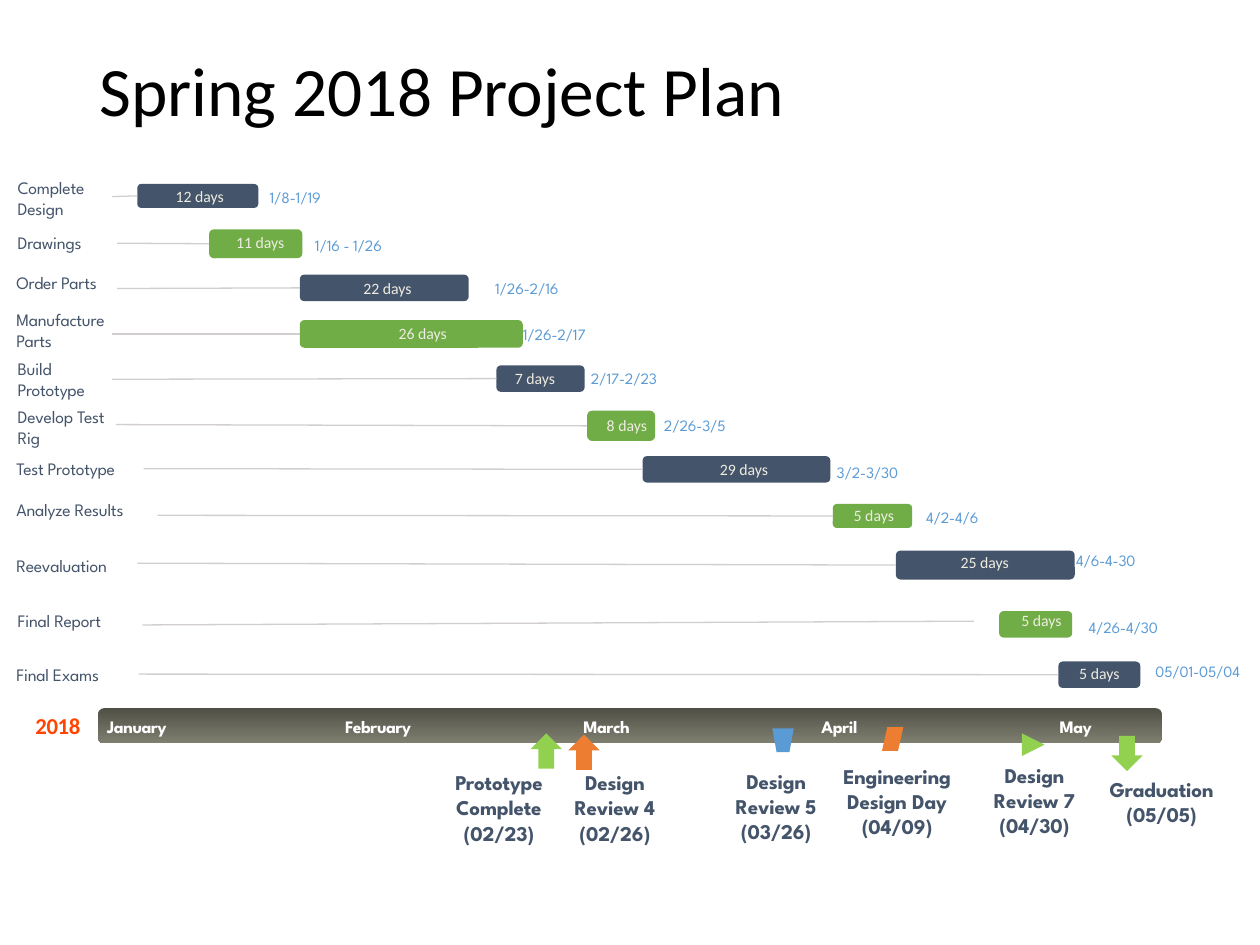
import pptx
import pptx.dml.color
import pptx.enum.shapes
import pptx.enum.text
import pptx.oxml.ns
import pptx.util
from lxml import etree

RGB = pptx.dml.color.RGBColor
SHAPE = pptx.enum.shapes.MSO_SHAPE
ALIGN = pptx.enum.text.PP_ALIGN
inch = pptx.util.Inches

NAVY = RGB(0x44, 0x54, 0x6A)
GREEN = RGB(0x70, 0xAD, 0x47)
LIME = RGB(0x92, 0xD0, 0x50)
ORANGE = RGB(0xED, 0x7D, 0x31)
BLUE = RGB(0x5B, 0x9B, 0xD5)
LEADER_GREY = RGB(0xD2, 0xCE, 0xCE)
CREAM = RGB(0xEE, 0xEC, 0xE1)
YEAR_RED = RGB(0xFF, 0x45, 0x00)
BAND_DARK = RGB(0x50, 0x50, 0x46)
BAND_LIGHT = RGB(0x7F, 0x7F, 0x70)
WHITE = RGB(0xFF, 0xFF, 0xFF)
BLACK = RGB(0, 0, 0)

BODY, PLAIN = "League Spartan", "Calibri"
LINE_10PT, LINE_9PT, LINE_12PT = 0.17, 0.15, 0.2

# Task: (name, left, top, lines), leader start (x, y),
# bar (left, width, height), duration (text, left, top), dates (text, left, top)
TASKS = [
    (("Complete Design", 0.14, 1.4, 2), (0.89, 1.56), (1.09, 0.96, 0.19),
     ("12 days", 1.39, 1.48), ("1/8-1/19", 2.14, 1.49)),
    (("Drawings", 0.14, 1.84, 1), (0.93, 1.93), (1.66, 0.74, 0.23),
     ("11 days", 1.87, 1.85), ("1/16 - 1/26", 2.5, 1.87)),
    (("Order Parts", 0.13, 2.16, 1), (0.93, 2.29), (2.38, 1.34, 0.21),
     ("22 days", 2.88, 2.21), ("1/26-2/16", 3.93, 2.21)),
    (("Manufacture Parts", 0.13, 2.45, 2), (0.89, 2.65), (2.38, 1.77, 0.22),
     ("26 days", 3.16, 2.57), ("1/26-2/17", 4.15, 2.58)),
    (("Build Prototype", 0.14, 2.84, 2), (0.89, 3.01), (3.94, 0.7, 0.21),
     ("7 days", 4.05, 2.93), ("2/17-2/23", 4.69, 2.93)),
    (("Develop Test Rig", 0.14, 3.22, 2), (0.92, 3.37), (4.66, 0.54, 0.24),
     ("8 days", 4.78, 3.3), ("2/26-3/5", 5.27, 3.3)),
    (("Test Prototype", 0.13, 3.63, 1), (1.14, 3.72), (5.1, 1.49, 0.21),
     ("29 days", 5.71, 3.65), ("3/2-3/30", 6.64, 3.67)),
    (("Analyze Results", 0.13, 3.96, 1), (1.25, 4.09), (6.61, 0.63, 0.19),
     ("5 days", 6.74, 4.01), ("4/2-4/6", 7.35, 4.03)),
    (("Reevaluation", 0.13, 4.4, 1), (1.09, 4.47), (7.11, 1.42, 0.23),
     ("25 days", 7.62, 4.39), ("4/6-4-30", 8.54, 4.37)),
    (("Final Report", 0.14, 4.84, 1), (1.13, 4.96), (7.93, 0.58, 0.21),
     ("5 days", 8.07, 4.85), ("4/26-4/30", 8.64, 4.9)),
    (("Final Exams", 0.13, 5.27, 1), (1.1, 5.35), (8.4, 0.65, 0.21),
     ("5 days", 8.53, 5.27), ("05/01-05/04", 9.17, 5.25)),
]
BAR_TOPS = [round(1.46 + 0.36 * row, 2) for row in range(7)] + [4, 4.37, 4.85, 5.25]
# Leaders that stop short of their bar: task -> end point
SHORT_LEADERS = {"Final Report": (7.73, 4.93)}

MONTHS = ["January", "February", "March", "April", "May"]
MONTH_LEFT, MONTH_PITCH, MONTH_WIDTH = 0.85, 1.89, 0.8

# Milestone: name, date, label (left, top, width, lines), marker, box, colour, rotation
MILESTONES = [
    ("Prototype Complete", "(02/23)", (3.5, 6.11, 0.92, 3),
     SHAPE.DOWN_ARROW, (4.21, 5.82, 0.25, 0.28), LIME, 180),
    ("Design Review 4", "(02/26)", (4.42, 6.11, 0.92, 3),
     SHAPE.UP_ARROW, (4.51, 5.83, 0.25, 0.28), ORANGE, 0),
    ("Design Review 5", "(03/26)", (5.7, 6.1, 0.92, 3),
     SHAPE.FLOWCHART_MANUAL_OPERATION, (6.13, 5.78, 0.17, 0.19), BLUE, 0),
    ("Engineering Design Day", "(04/09)", (6.55, 6.06, 1.14, 3),
     SHAPE.PARALLELOGRAM, (7, 5.77, 0.17, 0.19), ORANGE, 0),
    ("Design Review 7", "(04/30)", (7.75, 6.05, 0.92, 3),
     SHAPE.FLOWCHART_MERGE, (8.11, 5.82, 0.18, 0.18), LIME, 270),
    ("Graduation", "(05/05)", (8.67, 6.16, 1.1, 2),
     SHAPE.DOWN_ARROW, (8.82, 5.84, 0.25, 0.28), LIME, 0),
]

deck = pptx.Presentation()
deck.slide_width, deck.slide_height = inch(10), inch(7.5)
slide = deck.slides.add_slide(deck.slide_layouts[6])


def add_text(text, box, size, color, font=BODY, bold=False, align=ALIGN.LEFT,
             tracking=0, inset=0, spacing=None):
    frame = slide.shapes.add_textbox(*map(inch, box)).text_frame
    frame.word_wrap = True
    frame.vertical_anchor = pptx.enum.text.MSO_ANCHOR.MIDDLE
    frame.margin_left = frame.margin_right = inch(inset)
    frame.margin_top = frame.margin_bottom = inch(inset / 2)
    frame.text = text
    for paragraph in frame.paragraphs:
        paragraph.alignment = align
        paragraph.line_spacing = spacing
        for run in paragraph.runs:
            run.font.size = pptx.util.Pt(size)
            run.font.name = font
            run.font.bold = bold
            run.font.color.rgb = color
            if tracking:
                run.font._element.set("spc", str(round(tracking * 100)))


def add_block(kind, box, color=None, rotation=0):
    block = slide.shapes.add_shape(kind, *map(inch, box))
    block.shadow.inherit = False
    block.line.fill.background()
    block.rotation = rotation
    if color is not None:
        block.fill.solid()
        block.fill.fore_color.rgb = color
    return block


def add_leader(start, end, bar=None):
    leader = slide.shapes.add_connector(
        pptx.enum.shapes.MSO_CONNECTOR.STRAIGHT, *map(inch, start + end))
    leader.line.color.rgb = LEADER_GREY
    leader.line.width = pptx.util.Pt(0.75)
    etree.SubElement(leader._element.spPr, pptx.oxml.ns.qn("a:effectLst"))
    if bar is not None:
        leader.end_connect(bar, 1)


# Title
add_text("Spring 2018 Project Plan", (0.69, 0.4, 8.62, 0.7), 39.6, BLACK,
         font=PLAIN, inset=0.1, spacing=0.9)

# Task rows, bars alternating in colour
for row, (task, start, bar_box, duration, dates) in enumerate(TASKS):
    name, name_left, name_top, lines = task
    left, width, height = bar_box
    top = BAR_TOPS[row]
    bar = add_block(SHAPE.ROUNDED_RECTANGLE, (left, top, width, height),
                    GREEN if row % 2 else NAVY)
    if name in SHORT_LEADERS:
        add_leader(start, SHORT_LEADERS[name])
    else:
        add_leader(start, (left, top + height / 2), bar)
    name_width = 0.75 if lines == 2 else 1.01
    add_text(name, (name_left, name_top, name_width, lines * LINE_10PT), 10, NAVY,
             tracking=-0.1)
    add_text(duration[0], (*duration[1:], 0.39, LINE_9PT), 9, CREAM,
             font=PLAIN, align=ALIGN.CENTER)
    add_text(dates[0], (*dates[1:], 0.76, LINE_9PT), 9, BLUE, tracking=-0.1)

# Month band
add_text("2018", (0.21, 5.65, 0.5, 0.22), 13, YEAR_RED, font=PLAIN, bold=True,
         align=ALIGN.CENTER, tracking=-0.2)
band = add_block(SHAPE.ROUNDED_RECTANGLE, (0.78, 5.62, 8.44, 0.28))
band.fill.gradient()
band.fill.gradient_angle = 270
for stop, color in zip(band.fill.gradient_stops, (BAND_DARK, BAND_LIGHT)):
    stop.color.rgb = color
for column, month in enumerate(MONTHS):
    add_text(month, (MONTH_LEFT + column * MONTH_PITCH, 5.68, MONTH_WIDTH, LINE_10PT),
             10, WHITE, bold=True, tracking=-0.2)

# Milestones
for name, date, (left, top, width, lines), marker, box, color, rotation in MILESTONES:
    add_block(marker, box, color, rotation)
    add_text(f"{name}\n{date}", (left, top, width, lines * LINE_12PT), 12, NAVY,
             bold=True, align=ALIGN.CENTER, tracking=-0.1)

deck.save("out.pptx")
